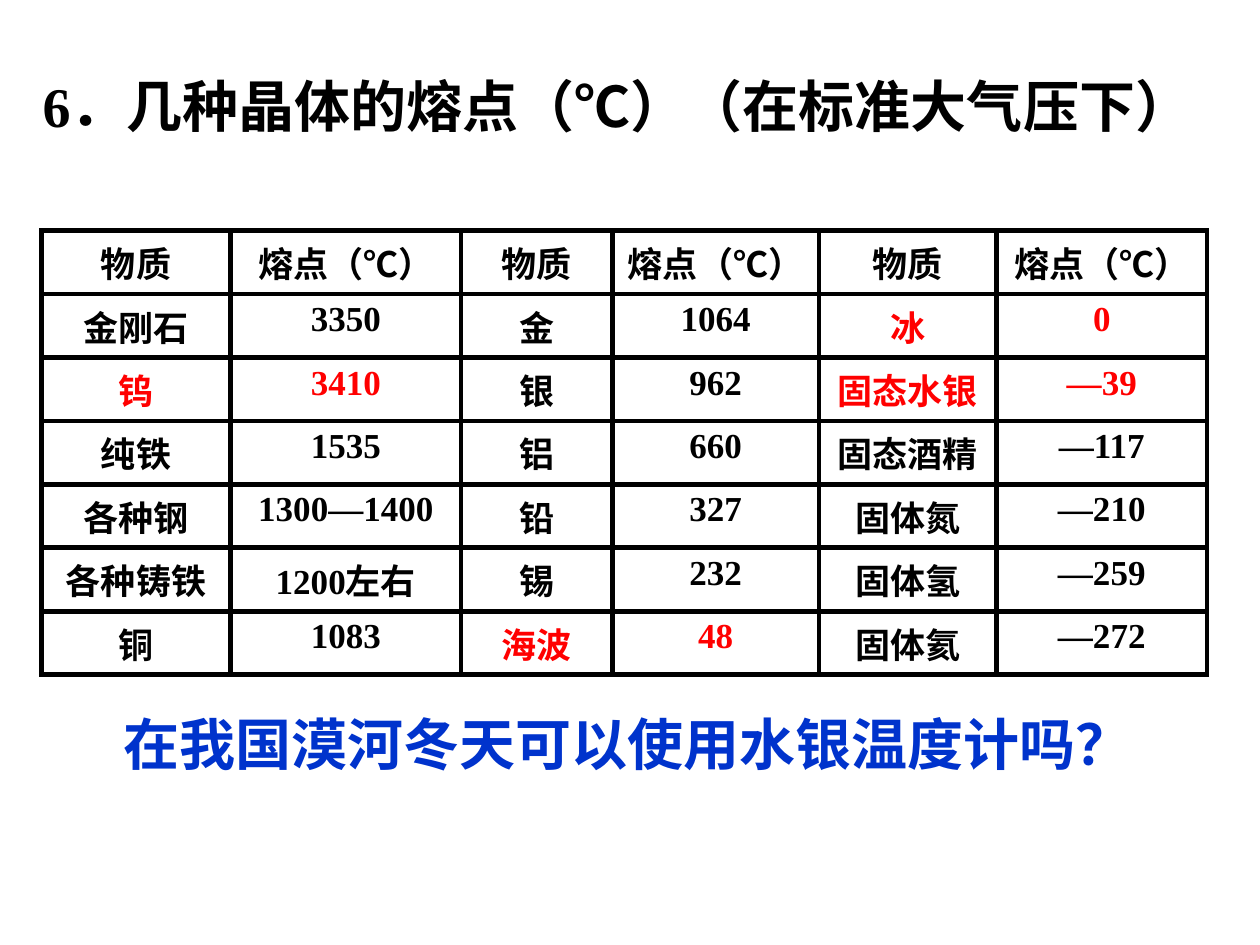
from dataclasses import dataclass

from lxml import etree
from pptx import Presentation
from pptx.dml.color import RGBColor
from pptx.enum.text import MSO_ANCHOR, MSO_AUTO_SIZE, PP_ALIGN
from pptx.oxml.ns import qn
from pptx.util import Pt

CENTER, LEFT = PP_ALIGN.CENTER, PP_ALIGN.LEFT
TOP, MIDDLE = MSO_ANCHOR.TOP, MSO_ANCHOR.MIDDLE
NO_FIT = MSO_AUTO_SIZE.NONE
EMU_PER_PX = 9144  # 100 px to the inch


def px(length: int) -> int:
    return length * EMU_PER_PX


@dataclass(frozen=True)
class Theme:
    font: str = "Times New Roman"
    ink: str = "000000"
    highlight: str = "FF0000"
    question: str = "0033CC"
    heading_pt: int = 32
    cell_pt: int = 20
    border_pt: int = 3


@dataclass(frozen=True)
class Box:
    left: int
    top: int
    width: int
    height: int


@dataclass(frozen=True)
class Substance:
    name: str
    melting_point: str
    highlighted: bool = False


THEME = Theme()
HEADER = Substance("物质", "熔点（℃）")
# Each group fills one pair of columns
GROUPS = [
    [
        HEADER,
        Substance("金刚石", "3350"),
        Substance("钨", "3410", True),
        Substance("纯铁", "1535"),
        Substance("各种钢", "1300—1400"),
        Substance("各种铸铁", "1200左右"),
        Substance("铜", "1083"),
    ],
    [
        HEADER,
        Substance("金", "1064"),
        Substance("银", "962"),
        Substance("铝", "660"),
        Substance("铅", "327"),
        Substance("锡", "232"),
        Substance("海波", "48", True),
    ],
    [
        HEADER,
        Substance("冰", "0", True),
        Substance("固态水银", "—39", True),
        Substance("固态酒精", "—117"),
        Substance("固体氮", "—210"),
        Substance("固体氢", "—259"),
        Substance("固体氦", "—272"),
    ],
]
COLUMN_WIDTHS = [150, 183, 120, 164, 141, 167]
ROW_HEIGHT = 49


def write(frame, text: str, size: int, color: str, align) -> None:
    paragraph = frame.paragraphs[0]
    paragraph.text = text
    paragraph.alignment = align
    paragraph.space_before = Pt(0)
    font = paragraph.runs[0].font
    for attribute, value in {"name": THEME.font, "size": Pt(size), "bold": True}.items():
        setattr(font, attribute, value)
    font.color.rgb = RGBColor.from_string(color)


def fill_placeholder(holder, box: Box, text: str, color: str, align, anchor) -> None:
    for side in ("left", "top", "width", "height"):
        setattr(holder, side, px(getattr(box, side)))
    frame = holder.text_frame
    for attribute, value in {"word_wrap": True, "auto_size": NO_FIT, "vertical_anchor": anchor}.items():
        setattr(frame, attribute, value)
    write(frame, text, THEME.heading_pt, color, align)


def remove_bullet(paragraph, indent: int) -> None:
    properties = paragraph._p.get_or_add_pPr()
    properties.set("marL", str(px(indent)))
    properties.set("indent", "0")
    etree.SubElement(properties, qn("a:buNone"))


def draw_borders(cell) -> None:
    properties = cell._tc.get_or_add_tcPr()
    for side in ("lnL", "lnR", "lnT", "lnB"):
        line = etree.SubElement(properties, qn(f"a:{side}"), w=str(Pt(THEME.border_pt)))
        fill = etree.SubElement(line, qn("a:solidFill"))
        etree.SubElement(fill, qn("a:srgbClr"), val=THEME.ink)


def draw_cell(cell, text: str, color: str) -> None:
    draw_borders(cell)
    cell.fill.background()
    write(cell.text_frame, text, THEME.cell_pt, color, CENTER)


def draw_melting_points(slide, left: int, top: int) -> None:
    row_count = len(GROUPS[0])
    table = slide.shapes.add_table(
        row_count, len(COLUMN_WIDTHS), px(left), px(top),
        px(sum(COLUMN_WIDTHS)), px(ROW_HEIGHT * row_count),
    ).table
    table.first_row = table.horz_banding = False
    for column, width in zip(table.columns, COLUMN_WIDTHS):
        column.width = px(width)
    for group_index, group in enumerate(GROUPS):
        for row, substance in enumerate(group):
            color = THEME.highlight if substance.highlighted else THEME.ink
            for offset, text in enumerate((substance.name, substance.melting_point)):
                draw_cell(table.cell(row, 2 * group_index + offset), text, color)


def main() -> None:
    presentation = Presentation()
    presentation.slide_width, presentation.slide_height = px(1000), px(750)
    slide = presentation.slides.add_slide(presentation.slide_layouts[1])

    # Heading
    fill_placeholder(slide.shapes.title, Box(0, 21, 980, 125),
                     "6．几种晶体的熔点（℃）（在标准大气压下）", THEME.ink, CENTER, MIDDLE)

    # Closing question
    question = slide.placeholders[1]
    fill_placeholder(question, Box(50, 558, 900, 112),
                     "在我国漠河冬天可以使用水银温度计吗？", THEME.question, LEFT, TOP)
    remove_bullet(question.text_frame.paragraphs[0], 38)

    # Melting point table
    draw_melting_points(slide, 33, 183)

    presentation.save("out.pptx")


if __name__ == "__main__":
    main()
